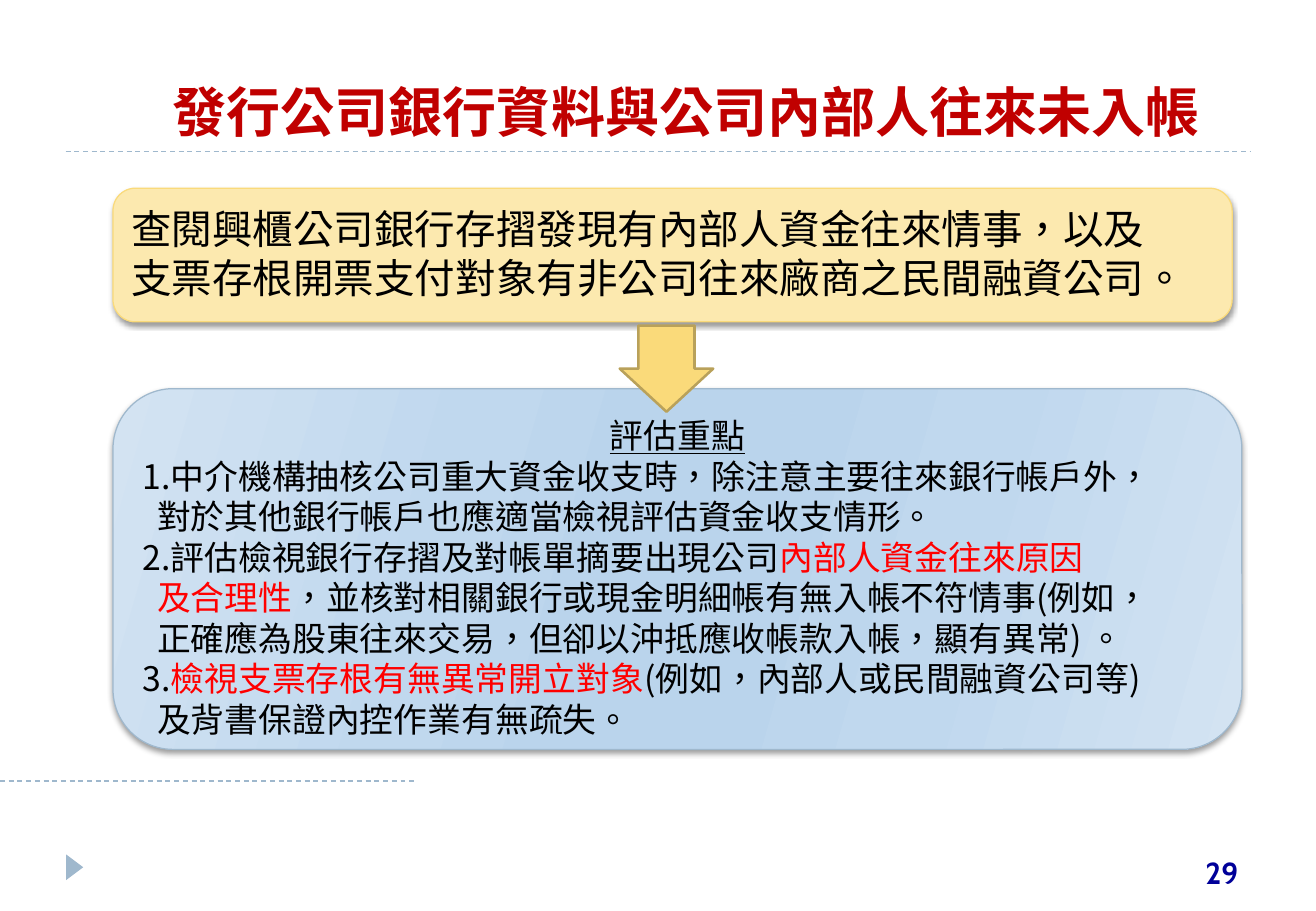
from lxml.etree import SubElement
from pptx import Presentation
from pptx.dml.color import RGBColor
from pptx.enum.dml import MSO_LINE
from pptx.enum.shapes import MSO_CONNECTOR, MSO_SHAPE
from pptx.enum.text import MSO_ANCHOR, PP_ALIGN
from pptx.oxml.ns import qn
from pptx.util import Pt

PX = 9144  # 100 px to the inch

BLACK = RGBColor(0x00, 0x00, 0x00)
RED = RGBColor(0xFF, 0x00, 0x00)
TITLE_RED = RGBColor(0xC0, 0x00, 0x00)
PAGE_BLUE = RGBColor(0x00, 0x00, 0x99)
RULE_BLUE = RGBColor(0x9F, 0xB8, 0xCD)
CREAM = RGBColor(0xFC, 0xE9, 0xAF)
GOLD = RGBColor(0xFA, 0xDA, 0x7A)
DARK_GOLD = RGBColor(0xB9, 0xA1, 0x5A)
EDGE_BLUE = RGBColor(0xD3, 0xE3, 0xF2)
MID_BLUE = RGBColor(0xC0, 0xD8, 0xEE)
CORE_BLUE = RGBColor(0xBA, 0xD4, 0xEC)

BODY_FONT = "Noto Sans CJK SC"
TITLE_FONT = "TeX Gyre Bonum"
PAGE_FONT = "Cabin"

TITLE = "發行公司銀行資料與公司內部人往來未入帳"
PAGE_NUMBER = "29"
FINDING = [
    "查閱興櫃公司銀行存摺發現有內部人資金往來情事，以及",
    "支票存根開票支付對象有非公司往來廠商之民間融資公司。",
]
REVIEW_HEADING = "評估重點"
# Each line: left indent in px, then (text, colour) pieces
REVIEW_LINES = [
    (0, [("1.中介機構抽核公司重大資金收支時，除注意主要往來銀行帳戶外，", BLACK)]),
    (12, [("對於其他銀行帳戶也應適當檢視評估資金收支情形。", BLACK)]),
    (0, [("2.評估檢視銀行存摺及對帳單摘要出現公司", BLACK), ("內部人資金往來原因", RED)]),
    (12, [("及合理性", RED), ("，並核對相關銀行或現金明細帳有無入帳不符情事(例如，", BLACK)]),
    (12, [("正確應為股東往來交易，但卻以沖抵應收帳款入帳，顯有異常) 。", BLACK)]),
    (0, [("3.", BLACK), ("檢視支票存根有無異常開立對象", RED),
         ("(例如，內部人或民間融資公司等)", BLACK)]),
    (12, [("及背書保證內控作業有無疏失。", BLACK)]),
]
GRADIENT_STOPS = [(0, EDGE_BLUE), (30, MID_BLUE), (45, CORE_BLUE),
                  (55, CORE_BLUE), (73, MID_BLUE), (100, EDGE_BLUE)]
DASHED_RULES = [(0, 343, 643), (54, 1029, 125)]  # from x, to x, y


def add_run(paragraph, text, font_name, size, colour, bold=False, underline=False):
    run = paragraph.add_run()
    run.text = text
    font = run.font
    font.name, font.size, font.bold = font_name, Pt(size), bold
    font.underline = underline
    font.color.rgb = colour
    properties = run._r.get_or_add_rPr()
    properties.set("lang", "zh-TW")
    properties.find(qn("a:latin")).addnext(
        SubElement(properties, qn("a:ea"), typeface=font_name))


def add_label(slide, box, text, font_name, size, colour, alignment, anchor):
    """Add a text box with one bold line."""
    text_frame = slide.shapes.add_textbox(*(PX * length for length in box)).text_frame
    text_frame.word_wrap = True
    text_frame.vertical_anchor = anchor
    paragraph = text_frame.paragraphs[0]
    paragraph.alignment = alignment
    add_run(paragraph, text, font_name, size, colour, bold=True)


def add_plain_shape(slide, kind, box, fill, line=None, line_width=0.75):
    shape = slide.shapes.add_shape(kind, *(PX * length for length in box))
    shape.shadow.inherit = False
    shape.fill.solid()
    shape.fill.fore_color.rgb = fill
    if line is None:
        shape.line.fill.background()
    else:
        shape.line.color.rgb = line
        shape.line.width = Pt(line_width)
    return shape


def add_colour(parent, colour):
    return SubElement(parent, qn("a:srgbClr"), val=str(colour))


def add_panel(slide, box, fill, line, size, lines):
    """Add a shadowed rounded panel; lines are (alignment, indent, pieces, underline)."""
    panel = add_plain_shape(slide, MSO_SHAPE.ROUNDED_RECTANGLE, box, fill, line)
    effects = panel._element.spPr.find(qn("a:effectLst"))
    shadow = SubElement(effects, qn("a:outerShdw"), blurRad=str(Pt(3)),
                        dist=str(Pt(2)), dir="5400000", rotWithShape="0")
    SubElement(add_colour(shadow, BLACK), qn("a:alpha"), val="40000")

    text_frame = panel.text_frame
    text_frame.word_wrap = True
    text_frame.vertical_anchor = MSO_ANCHOR.TOP
    text_frame.margin_top = 7 * PX
    for index, (alignment, indent, pieces, underline) in enumerate(lines):
        paragraph = text_frame.add_paragraph() if index else text_frame.paragraphs[0]
        paragraph.alignment = alignment
        paragraph.line_spacing = Pt(round(size * 1.2))
        paragraph._p.get_or_add_pPr().set("marL", str(indent * PX))
        for text, colour in pieces:
            add_run(paragraph, text, BODY_FONT, size, colour, underline=underline)
    return panel


def set_gradient(shape, stops, clockwise_angle):
    shape.fill.gradient()
    shape.fill.gradient_angle = 360 - clockwise_angle
    stop_list = shape._element.spPr.find(qn("a:gradFill")).find(qn("a:gsLst"))
    for old_stop in list(stop_list):
        stop_list.remove(old_stop)
    for position, colour in stops:
        add_colour(SubElement(stop_list, qn("a:gs"), pos=str(position * 1000)), colour)


def main():
    presentation = Presentation()
    presentation.slide_width = 1083 * PX
    presentation.slide_height = 750 * PX
    slide = presentation.slides.add_slide(presentation.slide_layouts[6])

    for start, end, y in DASHED_RULES:
        rule = slide.shapes.add_connector(
            MSO_CONNECTOR.STRAIGHT, start * PX, y * PX, end * PX, y * PX)
        rule.line.color.rgb = RULE_BLUE
        rule.line.width = Pt(0.75)
        rule.line.dash_style = MSO_LINE.DASH
        SubElement(rule._element.spPr, qn("a:effectLst"))

    marker = add_plain_shape(slide, MSO_SHAPE.ISOSCELES_TRIANGLE,
                             (51, 707, 21, 14), RULE_BLUE)
    marker.rotation = 90

    add_label(slide, (46, 52, 1038, 71), TITLE, TITLE_FONT, 32, TITLE_RED,
              PP_ALIGN.CENTER, MSO_ANCHOR.BOTTOM)
    add_label(slide, (794, 698, 235, 40), PAGE_NUMBER, PAGE_FONT, 18, PAGE_BLUE,
              PP_ALIGN.RIGHT, MSO_ANCHOR.TOP)

    finding_lines = [(PP_ALIGN.LEFT, 0, [(text, BLACK)], False) for text in FINDING]
    add_panel(slide, (93, 155, 921, 110), CREAM, GOLD, 24, finding_lines)

    review_lines = [(PP_ALIGN.CENTER, 0, [(REVIEW_HEADING, BLACK)], True)]
    review_lines += [(PP_ALIGN.LEFT, indent, pieces, False)
                     for indent, pieces in REVIEW_LINES]
    review = add_panel(slide, (93, 320, 929, 297), CORE_BLUE, RULE_BLUE, 20, review_lines)
    set_gradient(review, GRADIENT_STOPS, 16)

    arrow = add_plain_shape(slide, MSO_SHAPE.DOWN_ARROW, (510, 268, 77, 71),
                            GOLD, DARK_GOLD, 1.5)
    arrow.adjustments[0] = 0.6
    arrow.adjustments[1] = 0.5

    presentation.save("out.pptx")


if __name__ == "__main__":
    main()
